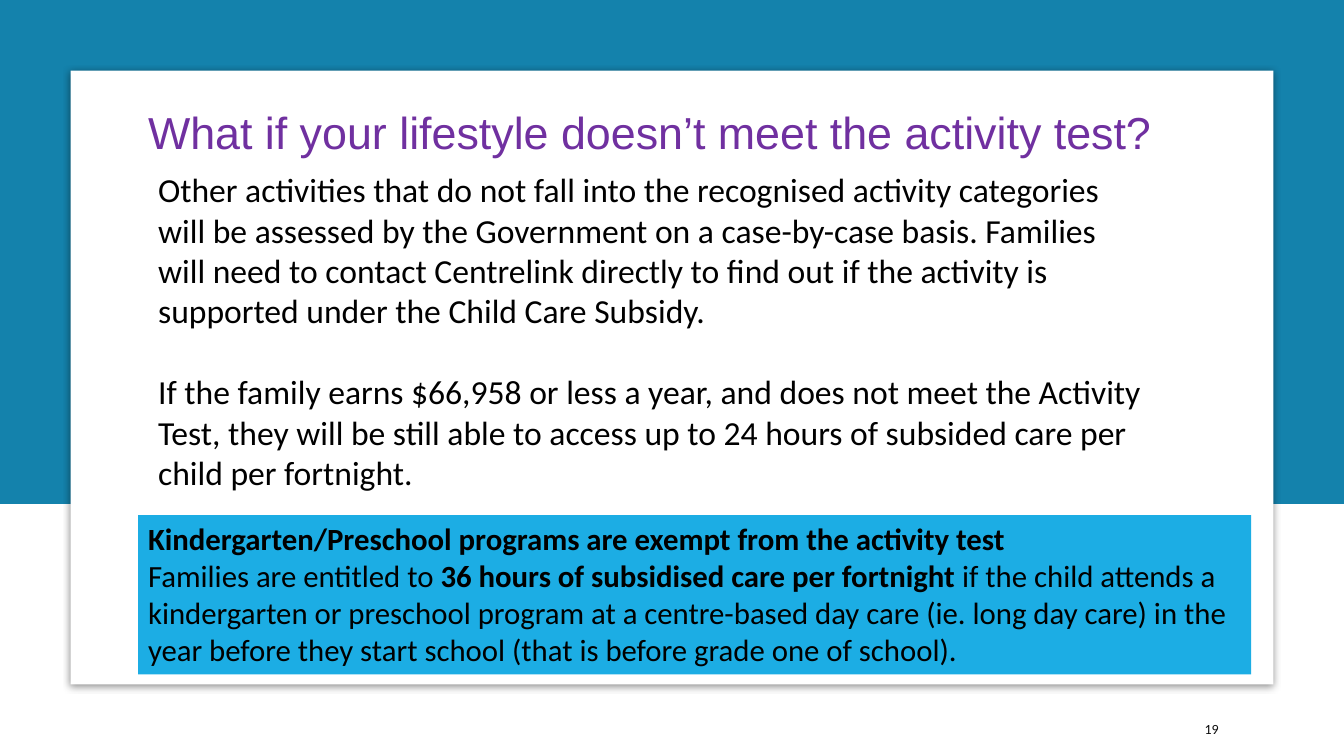
from lxml import etree
from pptx import Presentation
from pptx import util as u
from pptx.dml.color import RGBColor
from pptx.enum import shapes, text
from pptx.oxml import ns

TEAL = RGBColor(0x14, 0x82, 0xAC)
SKY = RGBColor(0x1C, 0xAD, 0xE4)
PURPLE = RGBColor(0x70, 0x30, 0xA0)
WHITE = RGBColor(0xFF, 0xFF, 0xFF)
BLACK = RGBColor(0, 0, 0)
DARK = RGBColor(0x0D, 0x0D, 0x0D)

SHADOW = f"""<a:effectLst {ns.nsdecls('a')}>
<a:outerShdw blurRad="{u.Pt(5)}" dist="{u.Pt(1.4)}" dir="5400000" algn="ctr" rotWithShape="0">
<a:srgbClr val="000000"><a:alpha val="43000"/></a:srgbClr>
</a:outerShdw></a:effectLst>"""

ACTIVITIES = (
    "Other activities that do not fall into the recognised activity categories "
    "will be assessed by the Government on a case-by-case basis. Families will "
    "need to contact Centrelink directly to find out if the activity is supported "
    "under the Child Care Subsidy."
)
LOW_INCOME = (
    "If the family earns $66,958 or less a year, and does not meet the Activity "
    "Test, they will be still able to access up to 24 hours of subsided care per "
    "child per fortnight."
)
EXEMPTION = [
    ("Families are entitled to ", False),
    ("36 hours of subsidised care per fortnight ", True),
    ("if the child attends a kindergarten or preschool program at a centre-based "
     "day care (ie. long day care) in the year before they start school (that is "
     "before grade one of school).", False),
]


class SlideBuilder:
    def __init__(self, slide, font="Calibri", color=BLACK):
        self.slide = slide
        self.font = font
        self.color = color

    def panel(self, left, top, width, height, fill, shadow=False):
        shape = self.slide.shapes.add_shape(
            shapes.MSO_SHAPE.RECTANGLE, *map(u.Inches, (left, top, width, height)))
        shape.fill.solid()
        shape.fill.fore_color.rgb = fill
        shape.line.fill.background()
        shape.shadow.inherit = False
        if shadow:
            properties = shape._element.spPr
            properties.remove(properties.find(ns.qn("a:effectLst")))
            properties.append(etree.fromstring(SHADOW))
        return shape

    def text_box(self, left, top, width, height, paragraphs, size, **style):
        box = self.slide.shapes.add_textbox(
            *map(u.Inches, (left, top, width, height)))
        self.fill_text(box, paragraphs, size, **style)
        return box

    def fill_text(self, shape, paragraphs, size, font=None, color=None,
                  gap=0, wrap=True, anchor=text.MSO_ANCHOR.TOP):
        frame = shape.text_frame
        frame.word_wrap = wrap
        frame.vertical_anchor = anchor
        for index, runs in enumerate(paragraphs):
            paragraph = frame.add_paragraph() if index else frame.paragraphs[0]
            paragraph.alignment = text.PP_ALIGN.LEFT
            paragraph.font.name = font or self.font
            paragraph.font.size = u.Pt(size)
            paragraph.font.color.rgb = color or self.color
            if index < len(paragraphs) - 1:
                paragraph.space_after = u.Pt(gap)
            for wording, bold in runs:
                run = paragraph.add_run()
                run.text = wording
                run.font.bold = bold


def main():
    presentation = Presentation()
    presentation.slide_width = u.Inches(13.33)
    presentation.slide_height = u.Inches(7.5)
    slide = presentation.slides.add_slide(presentation.slide_layouts[6])
    builder = SlideBuilder(slide)

    builder.panel(0, 0, 13.33, 5, TEAL)
    builder.panel(0.7, 0.7, 11.93, 6.09, WHITE, shadow=True)
    builder.text_box(11.85, 7.08, 1.06, 0.3, [[("19", False)]], 10,
                     color=DARK, anchor=text.MSO_ANCHOR.MIDDLE)
    builder.text_box(1.47, 1.63, 10.03, 4.54,
                     [[(ACTIVITIES, False)], [(LOW_INCOME, False)]], 24, gap=29)
    builder.text_box(1.37, 0.99, 10.24, 0.64,
                     [[("What if your lifestyle doesn’t meet the activity test?", False)]],
                     32, font="Arial", color=PURPLE, wrap=False)
    exemption_panel = builder.panel(1.37, 5.11, 11.04, 1.58, SKY)
    heading = "Kindergarten/Preschool programs are exempt from the activity test"
    builder.fill_text(exemption_panel, [[(heading, True)], EXEMPTION], 22)

    presentation.save("out.pptx")


if __name__ == "__main__":
    main()
